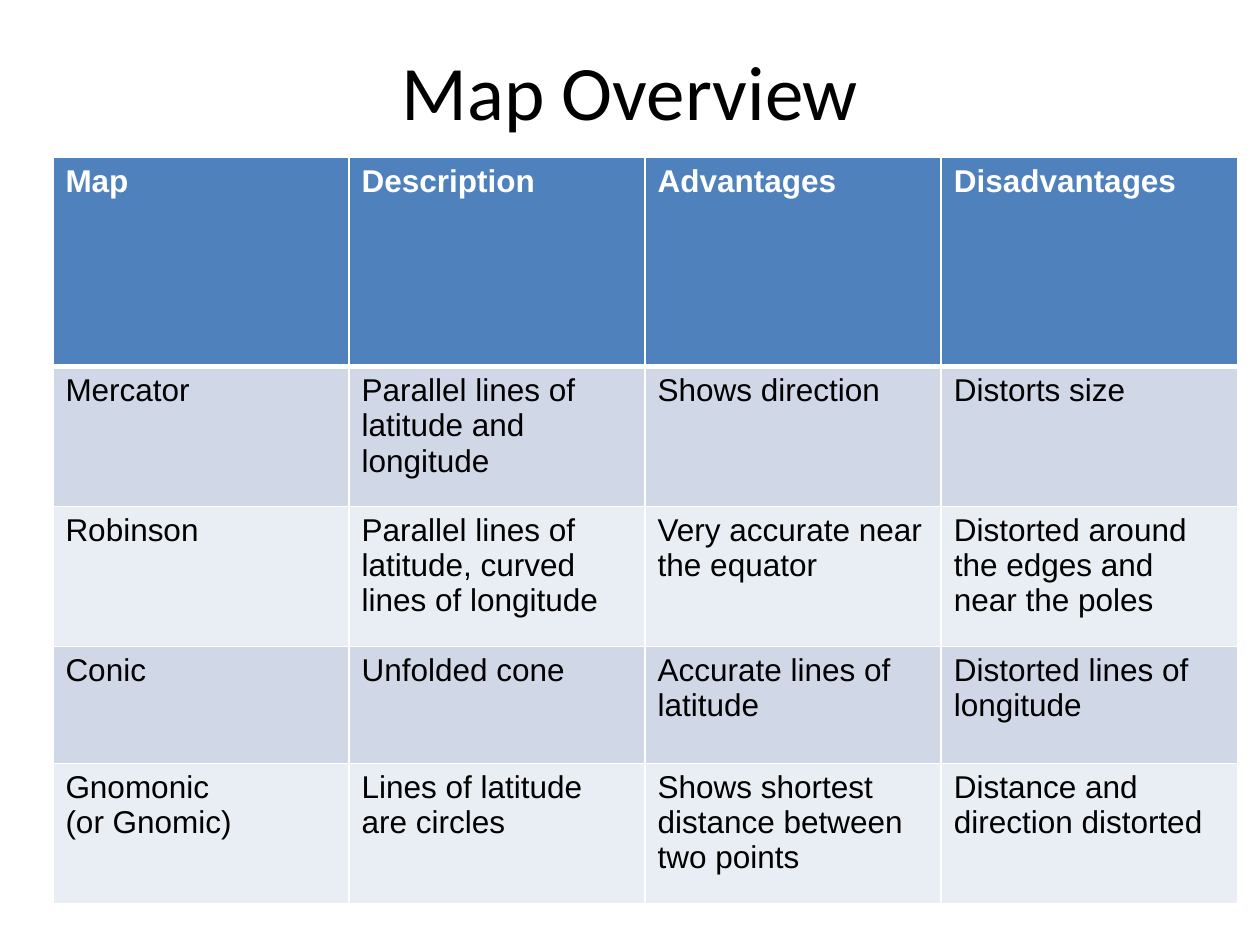
from lxml.etree import SubElement
from pptx import Presentation
from pptx.dml.color import RGBColor
from pptx.enum.text import MSO_ANCHOR, PP_ALIGN
from pptx.oxml.ns import qn
from pptx.util import Inches, Pt


def style_run(run, font_name, size, color, bold=False):
    run.font.name = font_name
    run.font.size = Pt(size)
    run.font.bold = bold
    run.font.color.rgb = RGBColor.from_string(color)


def add_border(cell, side, width, color="FFFFFF"):
    """Draw one side (L, R, T or B) of a cell; call before setting the fill."""
    line = SubElement(cell._tc.get_or_add_tcPr(), qn(f"a:ln{side}"), w=str(Pt(width)))
    fill = SubElement(line, qn("a:solidFill"))
    SubElement(fill, qn("a:srgbClr"), val=color)


HEADER_FILL = "4F81BD"
BAND_FILLS = ["E9EDF4", "D0D8E8"]
COLUMN_WIDTH = 2.35
ROW_HEIGHTS = [1.66, 1.11, 1.11, 0.93, 1.11]
MAPS = [
    ["Map", "Description", "Advantages", "Disadvantages"],
    ["Mercator", "Parallel lines of latitude and longitude", "Shows direction", "Distorts size"],
    ["Robinson", "Parallel lines of latitude, curved lines of longitude",
     "Very accurate near the equator", "Distorted around the edges and near the poles"],
    ["Conic", "Unfolded cone", "Accurate lines of latitude", "Distorted lines of longitude"],
    ["Gnomonic \n(or Gnomic)", "Lines of latitude are circles",
     "Shows shortest distance between two points", "Distance and direction distorted"],
]

presentation = Presentation()
presentation.slide_width = Inches(10)
presentation.slide_height = Inches(7.5)
slide = presentation.slides.add_slide(presentation.slide_layouts[5])

title = slide.shapes.title
title.left, title.top = Inches(0.5), Inches(0.17)
title.width, title.height = Inches(9), Inches(1.08)
title.text_frame.vertical_anchor = MSO_ANCHOR.MIDDLE
heading = title.text_frame.paragraphs[0]
heading.alignment = PP_ALIGN.CENTER
heading_run = heading.add_run()
heading_run.text = "Map Overview"
style_run(heading_run, "Calibri", 44, "000000")

overview = slide.shapes.add_table(
    len(MAPS), len(MAPS[0]), Inches(0.42), Inches(1.25),
    Inches(COLUMN_WIDTH * len(MAPS[0])), Inches(sum(ROW_HEIGHTS))).table
for column in overview.columns:
    column.width = Inches(COLUMN_WIDTH)

for row_number, (height, entries) in enumerate(zip(ROW_HEIGHTS, MAPS)):
    overview.rows[row_number].height = Inches(height)
    is_header = row_number == 0
    row_fill = HEADER_FILL if is_header else BAND_FILLS[row_number % 2]
    for column_number, entry in enumerate(entries):
        cell = overview.cell(row_number, column_number)
        cell.margin_left = cell.margin_right = Inches(0.1)
        cell.margin_top = cell.margin_bottom = Inches(0.05)
        add_border(cell, "L", 1)
        add_border(cell, "R", 1)
        add_border(cell, "T", 3 if row_number == 1 else 1)
        add_border(cell, "B", 3 if is_header else 1)
        cell.fill.solid()
        cell.fill.fore_color.rgb = RGBColor.from_string(row_fill)
        paragraph = cell.text_frame.paragraphs[0]
        for line_number, line in enumerate(entry.split("\n")):
            if line_number:
                paragraph.add_line_break()
            run = paragraph.add_run()
            run.text = line
            style_run(run, "Arial", 18, "FFFFFF" if is_header else "000000", is_header)

presentation.save("out.pptx")
